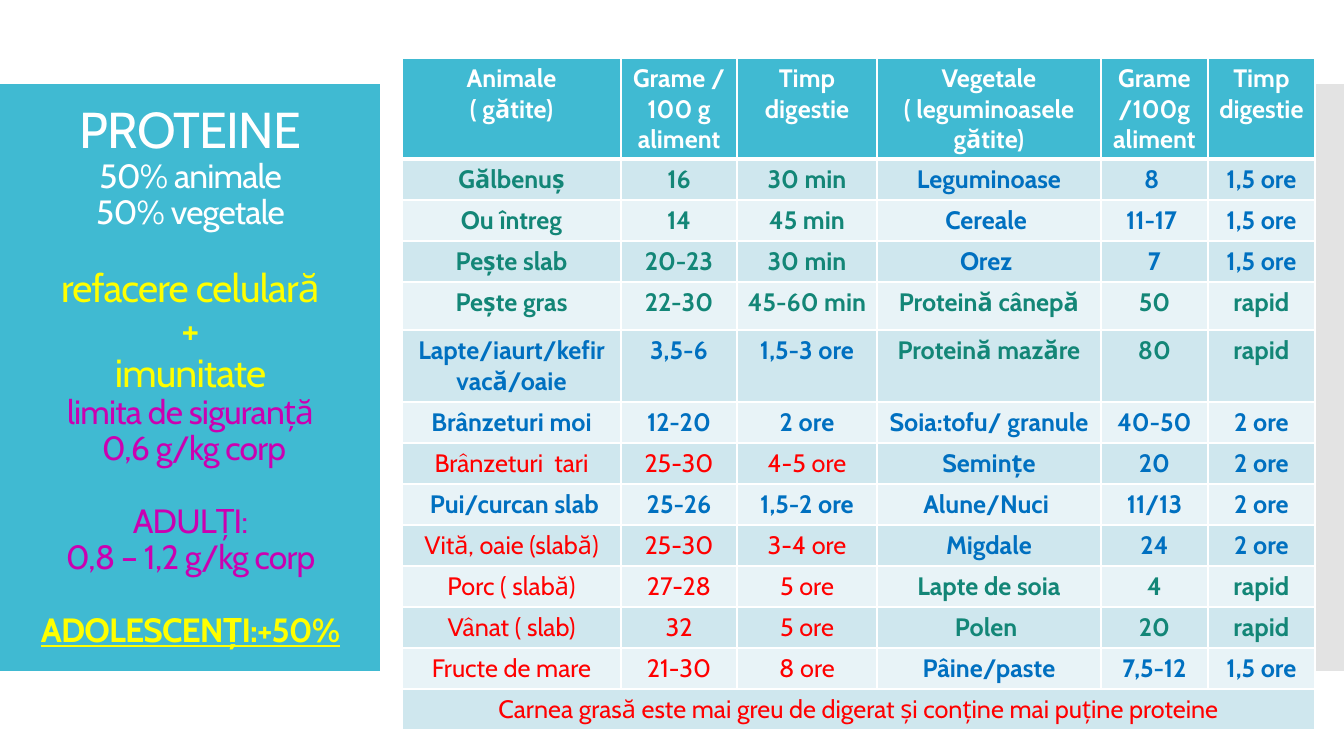
from lxml import etree
from pptx import Presentation, util as u
from pptx.dml.color import RGBColor
from pptx.enum import shapes, text
from pptx.oxml import ns

TEAL = RGBColor(0x40, 0xBA, 0xD2)
GREY = RGBColor(0xC8, 0xC8, 0xC8)
WHITE = RGBColor(0xFF, 0xFF, 0xFF)
YELLOW = RGBColor(0xFF, 0xFF, 0x00)
MAGENTA = RGBColor(0xCB, 0x00, 0xB1)
GREEN = RGBColor(0x13, 0x86, 0x77)
BLUE = RGBColor(0x00, 0x70, 0xC0)
RED = RGBColor(0xFF, 0x00, 0x00)
BAND_DARK = RGBColor(0xCF, 0xE7, 0xEE)
BAND_LIGHT = RGBColor(0xE8, 0xF3, 0xF7)
FONT = "Cabin"

SUMMARY = [
    ("PROTEINE", 36, WHITE, 0),
    ("50% animale", 24, WHITE, 0),
    ("50% vegetale", 24, WHITE, 0),
    ("refacere celulară", 28, YELLOW, 26),
    ("+", 28, YELLOW, 0),
    ("imunitate", 28, YELLOW, 0),
    ("limita de siguranță", 24, MAGENTA, 0),
    (" 0,6 g/kg corp", 24, MAGENTA, 0),
    ("ADULȚI:", 24, MAGENTA, 26),
    ("0,8 – 1,2 g/kg corp", 24, MAGENTA, 0),
    ("ADOLESCENȚI:+50%", 24, YELLOW, 26),
]
HEADER = ["Animale\n( gătite)", "Grame /100 g\naliment", "Timp digestie",
          "Vegetale\n( leguminoasele gătite)", "Grame\n/100g aliment", "Timp digestie"]
FOODS = [
    (GREEN, ["Gălbenuș", "16", "30 min"], BLUE, ["Leguminoase", "8 ", "1,5 ore"]),
    (GREEN, ["Ou întreg", "14", "45 min"], BLUE, ["Cereale ", "11-17 ", "1,5 ore"]),
    (GREEN, ["Pește slab", "20-23", "30 min"], BLUE, ["Orez ", "7", "1,5 ore"]),
    (GREEN, ["Pește gras", "22-30", "45-60 min"], GREEN, ["Proteină cânepă", "50", "rapid"]),
    (BLUE, ["Lapte/iaurt/kefir vacă/oaie", "3,5-6", "1,5-3 ore"],
     GREEN, ["Proteină mazăre", "80", "rapid"]),
    (BLUE, ["Brânzeturi moi", "12-20", "2 ore"], BLUE, ["Soia:tofu/ granule", "40-50", "2 ore"]),
    (RED, ["Brânzeturi  tari", "25-30", "4-5 ore"], BLUE, ["Semințe", "20", "2 ore"]),
    (BLUE, [" Pui/curcan slab", "25-26", "1,5-2 ore"], BLUE, ["Alune/Nuci ", "11/13", "2 ore"]),
    (RED, ["Vită, oaie (slabă)", "25-30", "3-4 ore"], BLUE, ["Migdale", "24", "2 ore"]),
    (RED, ["Porc ( slabă)", "27-28", "5 ore"], GREEN, ["Lapte de soia", "4", "rapid"]),
    (RED, ["Vânat ( slab)", "32", "5 ore"], GREEN, ["Polen ", "20", "rapid"]),
    (RED, ["Fructe de mare", "21-30", "8 ore"], BLUE, ["Pâine/paste", "7,5-12", "1,5 ore"]),
]
CONCLUSION = "Carnea grasă este mai greu de digerat și conține mai puține proteine"
COLUMN_WIDTHS = [219, 116, 140, 224, 107, 107]
ROW_HEIGHTS = [101, 41, 41, 41, 48, 72] + [41] * 7 + [40]


def px(length):
    return u.Emu(round(length * 914400 / 100.8))


def add_panel(slide, left, width, color):
    panel = slide.shapes.add_shape(shapes.MSO_SHAPE.RECTANGLE,
                                   px(left), px(84), px(width), px(587))
    panel.shadow.inherit = False
    panel.fill.solid()
    panel.fill.fore_color.rgb = color
    panel.line.fill.background()
    return panel


def style_paragraph(paragraph, size, color, bold=False):
    paragraph.alignment = text.PP_ALIGN.CENTER
    paragraph.font.name = FONT
    paragraph.font.size = u.Pt(size)
    paragraph.font.bold = bold
    paragraph.font.color.rgb = color


def add_summary(slide):
    summary = slide.shapes.add_textbox(0, px(43), px(381), px(669)).text_frame
    summary.word_wrap = True
    summary.vertical_anchor = text.MSO_ANCHOR.MIDDLE
    summary.text = "\n".join(line for line, *_ in SUMMARY)
    for paragraph, (_, size, color, gap) in zip(summary.paragraphs, SUMMARY):
        style_paragraph(paragraph, size, color)
        paragraph.line_spacing = 0.9
        paragraph.space_before = u.Pt(gap)
        for run in paragraph.runs:
            run.font._element.set("spc", "-60")
    teenagers = summary.paragraphs[-1].font
    teenagers.bold = True
    teenagers.underline = True


def set_borders(cell, row):
    properties = cell._tc.get_or_add_tcPr()
    heavy_side = {0: "lnB", 1: "lnT"}.get(row)
    for position, side in enumerate(("lnL", "lnR", "lnT", "lnB")):
        width = u.Pt(3 if side == heavy_side else 1)
        border = etree.Element(ns.qn(f"a:{side}"), w=str(width))
        fill = etree.SubElement(border, ns.qn("a:solidFill"))
        etree.SubElement(fill, ns.qn("a:srgbClr"), val=str(WHITE))
        properties.insert(position, border)


def fill_cell(cell, row, content, color, bold):
    cell.text = content
    for paragraph in cell.text_frame.paragraphs:
        style_paragraph(paragraph, 18, color, bold)
    cell.fill.solid()
    cell.fill.fore_color.rgb = TEAL if row == 0 else BAND_DARK if row % 2 else BAND_LIGHT
    set_borders(cell, row)


def add_food_table(slide):
    foods = slide.shapes.add_table(len(ROW_HEIGHTS), len(COLUMN_WIDTHS), px(402), px(58),
                                   px(sum(COLUMN_WIDTHS)), px(sum(ROW_HEIGHTS))).table
    for column, width in zip(foods.columns, COLUMN_WIDTHS):
        column.width = px(width)
    for row, height in zip(foods.rows, ROW_HEIGHTS):
        row.height = px(height)
    entries = [[(label, WHITE) for label in HEADER]]
    for animal_color, animal, plant_color, plant in FOODS:
        entries.append([(value, animal_color) for value in animal]
                       + [(value, plant_color) for value in plant])
    for row, entry in enumerate(entries):
        for column, (content, color) in enumerate(entry):
            fill_cell(foods.cell(row, column), row, content, color, color != RED)
    last = len(entries)
    foods.cell(last, 0).merge(foods.cell(last, len(COLUMN_WIDTHS) - 1))
    fill_cell(foods.cell(last, 0), last, CONCLUSION, RED, False)


def main():
    deck = Presentation()
    deck.slide_width, deck.slide_height = px(1344), px(756)
    slide = deck.slides.add_slide(deck.slide_layouts[6])
    add_panel(slide, 0, 380, TEAL)
    edge = add_panel(slide, 1302, 42, GREY)
    edge_color = edge.fill._xPr.find(".//" + ns.qn("a:srgbClr"))
    etree.SubElement(edge_color, ns.qn("a:alpha"), val="50000")
    add_summary(slide)
    add_food_table(slide)
    deck.save("out.pptx")


if __name__ == "__main__":
    main()
